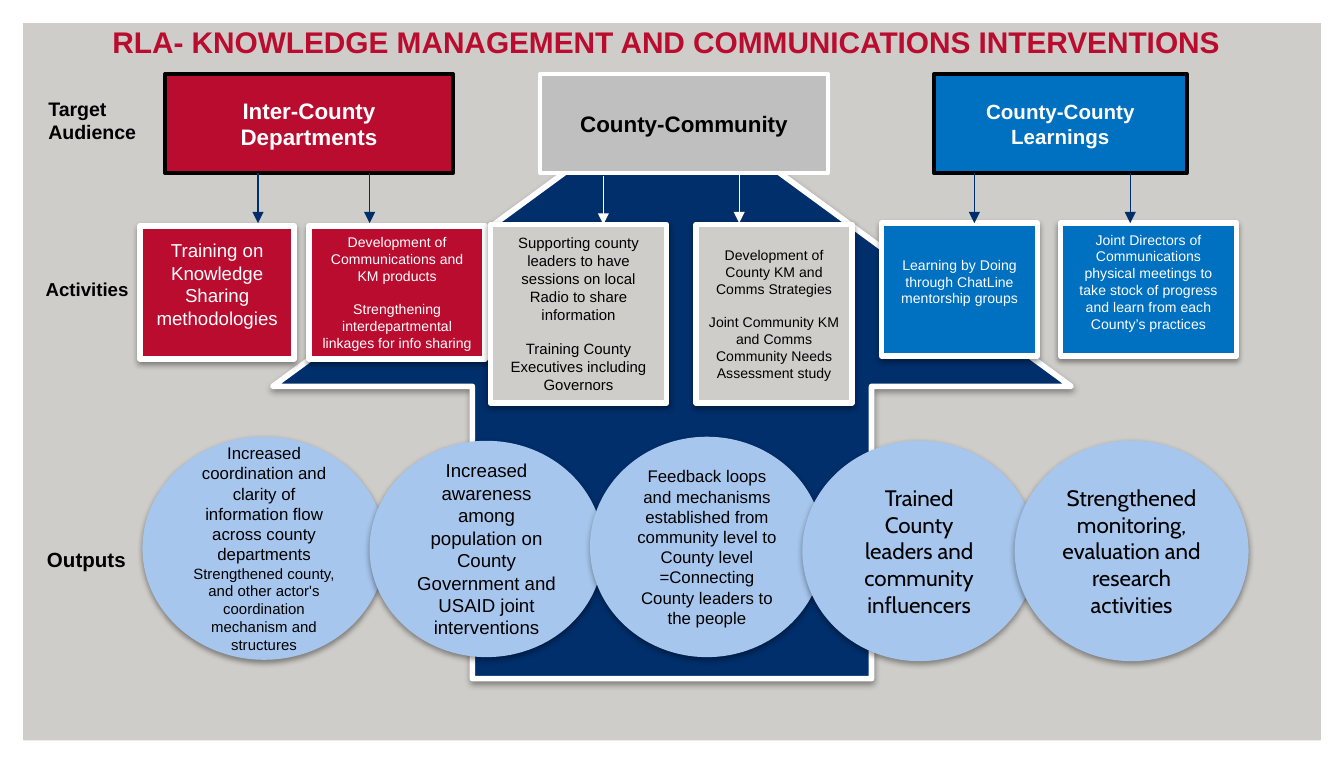
"""Build the knowledge management interventions slide."""
from lxml.etree import SubElement
from pptx import Presentation
from pptx.dml.color import RGBColor
from pptx.enum.shapes import MSO_CONNECTOR, MSO_SHAPE
from pptx.enum.text import MSO_ANCHOR, MSO_AUTO_SIZE, PP_ALIGN
from pptx.oxml.ns import qn
from pptx.util import Pt

PX = 9144
RED = RGBColor(0xBA, 0x0C, 0x2F)
NAVY = RGBColor(0x00, 0x2F, 0x6C)
ARROW_NAVY = RGBColor(0x00, 0x2E, 0x6A)
BLUE = RGBColor(0x00, 0x70, 0xC0)
SKY = RGBColor(0xA7, 0xC6, 0xED)
SILVER = RGBColor(0xBF, 0xBF, 0xBF)
STONE = RGBColor(0xCF, 0xCD, 0xC9)
BLACK = RGBColor(0x00, 0x00, 0x00)
WHITE = RGBColor(0xFF, 0xFF, 0xFF)

TITLE = "RLA- KNOWLEDGE MANAGEMENT AND COMMUNICATIONS INTERVENTIONS"
LABELS = [
    ((26, 402, 107, 29), "Outputs", 11),
    ((27, 67, 91, 45), "Target Audience", 10.5),
    ((25, 202, 81, 27), "Activities", 10),
]
AUDIENCES = [
    (123, 214, RED, BLACK, WHITE, "Inter-County Departments", 12),
    (402, 214, SILVER, WHITE, BLACK, "County-Community", 12),
    (695, 188, BLUE, BLACK, WHITE, "County-County Learnings", 11),
]
OUTPUTS = [
    ((106, 325, 181, 166), "Arial", [
        ("Increased coordination and clarity of information flow across county departments", 9),
        ("Strengthened county, and other actor's coordination mechanism and structures", 8)]),
    ((275, 328, 174, 161), "Arial", [
        ("Increased awareness among population on County Government and USAID joint "
         "interventions", 10)]),
    ((439, 325, 174, 164), "Arial", [
        ("Feedback loops and mechanisms established from community level to County level "
         "=Connecting County leaders to the people", 9)]),
    ((597, 328, 174, 164), "Cabin", [
        ("Trained County leaders and community influencers", 12)]),
    ((755, 328, 174, 164), "Cabin", [
        ("Strengthened monitoring, evaluation and research activities", 12)]),
]
ACTIVITIES = [
    ((104, 168, 115, 99), RED, WHITE, 10, 17, [
        "Training on Knowledge Sharing methodologies"]),
    ((230, 168, 131, 99), RED, WHITE, 7.5, 5, [
        "Development of Communications and KM products",
        "Strengthening interdepartmental linkages for info sharing"]),
    ((518, 167, 116, 133), STONE, BLACK, 7.5, 5, [
        "Development of County KM and Comms Strategies",
        "Joint Community KM and Comms Community Needs Assessment study"]),
    ((365, 167, 131, 133), STONE, BLACK, 8, 5, [
        "Supporting county leaders to have sessions on local Radio to share information",
        "Training County Executives including Governors"]),
    ((656, 166, 116, 99), BLUE, WHITE, 7.5, 17, [
        "Learning by Doing through ChatLine mentorship groups"]),
    ((789, 166, 131, 99), BLUE, WHITE, 7.5, 17, [
        "Joint Directors of Communications physical meetings to take stock of progress "
        "and learn from each County’s practices"]),
]
ARROWS = [
    (192, 129, 166, ARROW_NAVY), (275, 129, 166, ARROW_NAVY),
    (449, 131, 167, WHITE), (550, 129, 166, WHITE),
    (725, 129, 166, ARROW_NAVY), (841, 129, 166, ARROW_NAVY),
]


def emu(lengths):
    """Turn px lengths into EMU."""
    return [length * PX for length in lengths]


def apply(target, values):
    """Set every attribute in a dict of format values."""
    for name, value in values.items():
        setattr(target, name, value)


def write(shape, paragraphs, color, bold=False, font="Arial", align=PP_ALIGN.CENTER,
          anchor=MSO_ANCHOR.MIDDLE, bottom=5, gap=0):
    """Fill a shape with (text, size) paragraphs."""
    frame = shape.text_frame
    apply(frame, {
        "word_wrap": True, "auto_size": MSO_AUTO_SIZE.NONE, "vertical_anchor": anchor,
        "margin_left": 9 * PX, "margin_right": 9 * PX,
        "margin_top": 5 * PX, "margin_bottom": bottom * PX,
    })
    for index, (text, size) in enumerate(paragraphs):
        paragraph = frame.add_paragraph() if index else frame.paragraphs[0]
        paragraph.text = text
        apply(paragraph, {"alignment": align, "space_before": Pt(gap if index else 0)})
        apply(paragraph.font, {"name": font, "size": Pt(size), "bold": bold})
        paragraph.font.color.rgb = color


def add_block(slide, kind, box, fill, line=None, weight=0, shadow=False):
    """Add a filled preset shape, optionally outlined and shadowed."""
    block = slide.shapes.add_shape(kind, *emu(box))
    block.shadow.inherit = False
    block.fill.solid()
    block.fill.fore_color.rgb = fill
    if line is None:
        block.line.fill.background()
    else:
        block.line.color.rgb = line
        block.line.width = Pt(weight)
    if shadow:
        effects = block._element.spPr.find(qn("a:effectLst"))
        outer = SubElement(effects, qn("a:outerShdw"), blurRad="39370", dist="20320",
                           dir="5400000", rotWithShape="0")
        tint = SubElement(outer, qn("a:srgbClr"), val="000000")
        SubElement(tint, qn("a:alpha"), val="38000")
    return block


def add_title(slide):
    """Place and format the slide title."""
    title = slide.shapes.title
    apply(title, dict(zip(("left", "top", "width", "height"), emu((50, 16, 892, 34)))))
    write(title, [(TITLE, 16)], RED, bold=True, anchor=MSO_ANCHOR.TOP)
    title.text_frame.paragraphs[0].line_spacing = 0.9


def add_label(slide, box, text, size):
    """Add a bold row label."""
    label = slide.shapes.add_textbox(*emu(box))
    write(label, [(text, size)], BLACK, bold=True, align=PP_ALIGN.LEFT,
          anchor=MSO_ANCHOR.TOP)


def add_arrow(slide, x, top, bottom, color):
    """Add a downward arrow from an audience to an activity."""
    arrow = slide.shapes.add_connector(MSO_CONNECTOR.STRAIGHT, *emu((x, top, x, bottom)))
    arrow.line.color.rgb = color
    arrow.line.width = Pt(0.75)
    SubElement(arrow.line._get_or_add_ln(), qn("a:tailEnd"), type="triangle")
    SubElement(arrow._element.spPr, qn("a:effectLst"))


def main():
    """Build and save the slide."""
    deck = Presentation()
    apply(deck, {"slide_width": 1000 * PX, "slide_height": 567 * PX})
    slide = deck.slides.add_slide(deck.slide_layouts[5])
    slide.background.fill.solid()
    slide.background.fill.fore_color.rgb = STONE

    border = add_block(slide, MSO_SHAPE.FRAME, (0, 0, 1000, 568), WHITE)
    border.adjustments[0] = 0.03
    add_block(slide, MSO_SHAPE.UP_ARROW, (203, 70, 594, 435), NAVY, WHITE, 3, True)
    add_title(slide)
    for left, width, fill, line, color, text, size in AUDIENCES:
        audience = add_block(slide, MSO_SHAPE.RECTANGLE, (left, 55, width, 74), fill, line, 2)
        write(audience, [(text, size)], color, bold=True)
    for label in LABELS:
        add_label(slide, *label)
    for box, font, paragraphs in OUTPUTS:
        output = add_block(slide, MSO_SHAPE.OVAL, box, SKY, shadow=True)
        write(output, paragraphs, BLACK, font=font)
    for box, fill, color, size, bottom, texts in ACTIVITIES:
        activity = add_block(slide, MSO_SHAPE.RECTANGLE, box, fill, WHITE, 3, True)
        write(activity, [(text, size) for text in texts], color, bottom=bottom, gap=9)
    for arrow in ARROWS:
        add_arrow(slide, *arrow)
    deck.save("out.pptx")


if __name__ == "__main__":
    main()
